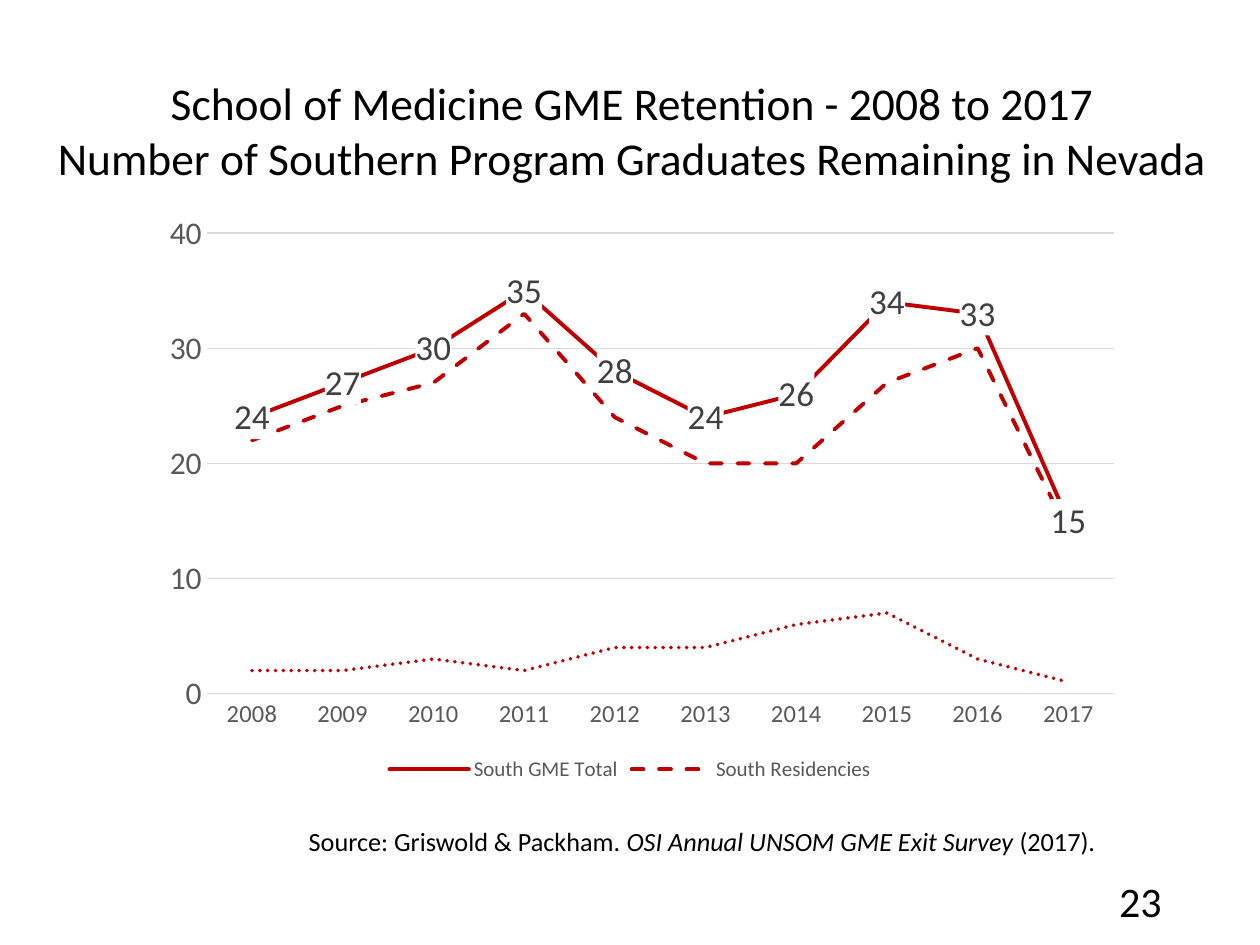
from dataclasses import dataclass
from typing import Optional

from lxml.etree import SubElement
from pptx import Presentation
from pptx.chart.data import CategoryChartData
from pptx.dml.color import RGBColor
from pptx.enum.chart import XL_CHART_TYPE as ChartType
from pptx.enum.chart import XL_LABEL_POSITION as LabelPosition
from pptx.enum.chart import XL_LEGEND_POSITION as LegendPosition
from pptx.enum.chart import XL_TICK_MARK as TickMark
from pptx.enum.dml import MSO_LINE as Dash
from pptx.enum.text import MSO_ANCHOR as Anchor
from pptx.enum.text import MSO_AUTO_SIZE as AutoSize
from pptx.enum.text import PP_ALIGN as Align
from pptx.oxml import parse_xml
from pptx.oxml.ns import nsdecls, qn
from pptx.util import Pt

EMU_PER_PX = 914400 / 126


@dataclass(frozen=True)
class Theme:
    face: str = "Calibri"
    ink: str = "000000"
    axis: str = "595959"
    label: str = "404040"
    grid: str = "D9D9D9"
    paper: str = "FFFFFF"
    accent: str = "C00000"
    title: int = 26
    page: int = 24
    source: int = 15
    years: int = 14
    counts: int = 18
    values: int = 20
    legend: int = 12


@dataclass(frozen=True)
class Box:
    left: int
    top: int
    width: int
    height: int

    def emu(self) -> tuple[int, ...]:
        return tuple(px(n) for n in (self.left, self.top, self.width, self.height))


@dataclass(frozen=True)
class Trend:
    """One line of the chart; a line without a name stays out of the legend."""
    graduates: tuple[int, ...]
    name: str = ""
    dash: Optional[Dash] = None
    labelled: bool = False


THEME = Theme()
YEARS = [str(year) for year in range(2008, 2018)]
TRENDS = [
    Trend((24, 27, 30, 35, 28, 24, 26, 34, 33, 15), "South GME Total", labelled=True),
    Trend((22, 25, 27, 33, 24, 20, 20, 27, 30, 14), "South Residencies", Dash.DASH),
    Trend((2, 2, 3, 2, 4, 4, 6, 7, 3, 1), dash=Dash.ROUND_DOT),
]
PLOT_AREA = {"x": 0.08, "y": 0.05, "w": 0.9, "h": 0.79}


def px(length: int) -> int:
    return round(length * EMU_PER_PX)


def style_font(font, size: int, color: str) -> None:
    font.name, font.size = THEME.face, Pt(size)
    font.color.rgb = RGBColor.from_string(color)


def style_line(line, color: str, width: float) -> None:
    line.color.rgb = RGBColor.from_string(color)
    line.width = Pt(width)


def fill_text(shape, box: Box, paragraphs: list[list[tuple[str, bool]]], size: int,
              align: Align, anchor: Anchor = Anchor.TOP) -> None:
    """Place a text shape and write its paragraphs of (text, italic) runs."""
    shape.left, shape.top, shape.width, shape.height = box.emu()
    frame = shape.text_frame
    frame.word_wrap, frame.auto_size = True, AutoSize.NONE
    frame.vertical_anchor = anchor
    for index, runs in enumerate(paragraphs):
        paragraph = frame.add_paragraph() if index else frame.paragraphs[0]
        paragraph.alignment = align
        style_font(paragraph.font, size, THEME.ink)
        for text, italic in runs:
            run = paragraph.add_run()
            run.text = text
            if italic:
                run.font.italic = True


def style_axes(chart) -> None:
    years, counts = chart.category_axis, chart.value_axis
    for axis, size in ((years, THEME.years), (counts, THEME.counts)):
        axis.major_tick_mark = axis.minor_tick_mark = TickMark.NONE
        style_font(axis.tick_labels.font, size, THEME.axis)
    style_line(years.format.line, THEME.grid, 0.75)
    counts.minimum_scale, counts.maximum_scale, counts.major_unit = 0, 40, 10
    counts.format.line.fill.background()
    style_line(counts.major_gridlines.format.line, THEME.grid, 0.75)


def style_trend(series, trend: Trend) -> None:
    series.smooth = False
    style_line(series.format.line, THEME.accent, 2.25)
    if trend.dash:
        series.format.line.dash_style = trend.dash
    series._element.find(qn("c:spPr")).find(qn("a:ln")).set("cap", "rnd")
    if trend.labelled:
        label_values(series)


def label_values(series) -> None:
    """Show the values on white patches over the line."""
    labels = series.data_labels
    labels.show_value = True
    labels.position = LabelPosition.CENTER
    style_font(labels.font, THEME.values, THEME.label)
    patch = parse_xml(
        f'<c:spPr {nsdecls("c", "a")}><a:solidFill><a:srgbClr val="{THEME.paper}"/>'
        "</a:solidFill></c:spPr>")
    series._element.find(qn("c:dLbls")).find(qn("c:txPr")).addprevious(patch)


def fix_plot_area(chart) -> None:
    plot_area = chart._chartSpace.chart.plotArea
    for old in plot_area.findall(qn("c:layout")):
        plot_area.remove(old)
    plot_area.insert(0, parse_xml(f'<c:layout {nsdecls("c")}><c:manualLayout/></c:layout>'))
    manual = plot_area[0][0]
    settings = {"layoutTarget": "inner", "xMode": "edge", "yMode": "edge", **PLOT_AREA}
    for tag, value in settings.items():
        SubElement(manual, qn(f"c:{tag}")).set("val", str(value))


def add_legend(chart) -> None:
    chart.has_legend = True
    legend = chart.legend
    legend.position, legend.include_in_layout = LegendPosition.BOTTOM, False
    style_font(legend.font, THEME.legend, THEME.axis)
    position = legend._element.find(qn("c:legendPos"))
    for index, trend in enumerate(TRENDS):
        if not trend.name:
            position.addnext(parse_xml(
                f'<c:legendEntry {nsdecls("c")}><c:idx val="{index}"/>'
                '<c:delete val="1"/></c:legendEntry>'))


def add_retention_chart(slide, box: Box) -> None:
    data = CategoryChartData()
    data.categories = YEARS
    for trend in TRENDS:
        data.add_series(trend.name, trend.graduates)
    chart = slide.shapes.add_chart(ChartType.LINE, *box.emu(), data).chart
    chart.has_title = False
    style_font(chart.font, 10, THEME.ink)
    chart.plots[0].vary_by_categories = False
    for trend, series in zip(TRENDS, chart.plots[0].series):
        style_trend(series, trend)
    style_axes(chart)
    fix_plot_area(chart)
    add_legend(chart)


def main() -> None:
    deck = Presentation()
    deck.slide_width, deck.slide_height = px(1260), px(945)
    slide = deck.slides.add_slide(deck.slide_layouts.get_by_name("Title Only"))

    # Title
    fill_text(slide.shapes.title, Box(32, 69, 1201, 123), [
        [("School of Medicine GME Retention - 2008 to 2017", False)],
        [("Number of Southern Program Graduates Remaining in Nevada", False)],
    ], THEME.title, Align.CENTER)

    # Source line and page number
    source_box, page_box = Box(280, 819, 844, 44), Box(890, 876, 284, 50)
    fill_text(slide.shapes.add_textbox(*source_box.emu()), source_box, [[
        ("Source: Griswold & Packham. ", False),
        ("OSI Annual UNSOM GME Exit Survey ", True),
        ("(2017).", False),
    ]], THEME.source, Align.CENTER)
    fill_text(slide.shapes.add_textbox(*page_box.emu()), page_box,
              [[("23", False)]], THEME.page, Align.RIGHT, Anchor.MIDDLE)

    # Retention chart
    add_retention_chart(slide, Box(126, 204, 1008, 583))

    deck.save("out.pptx")


if __name__ == "__main__":
    main()
